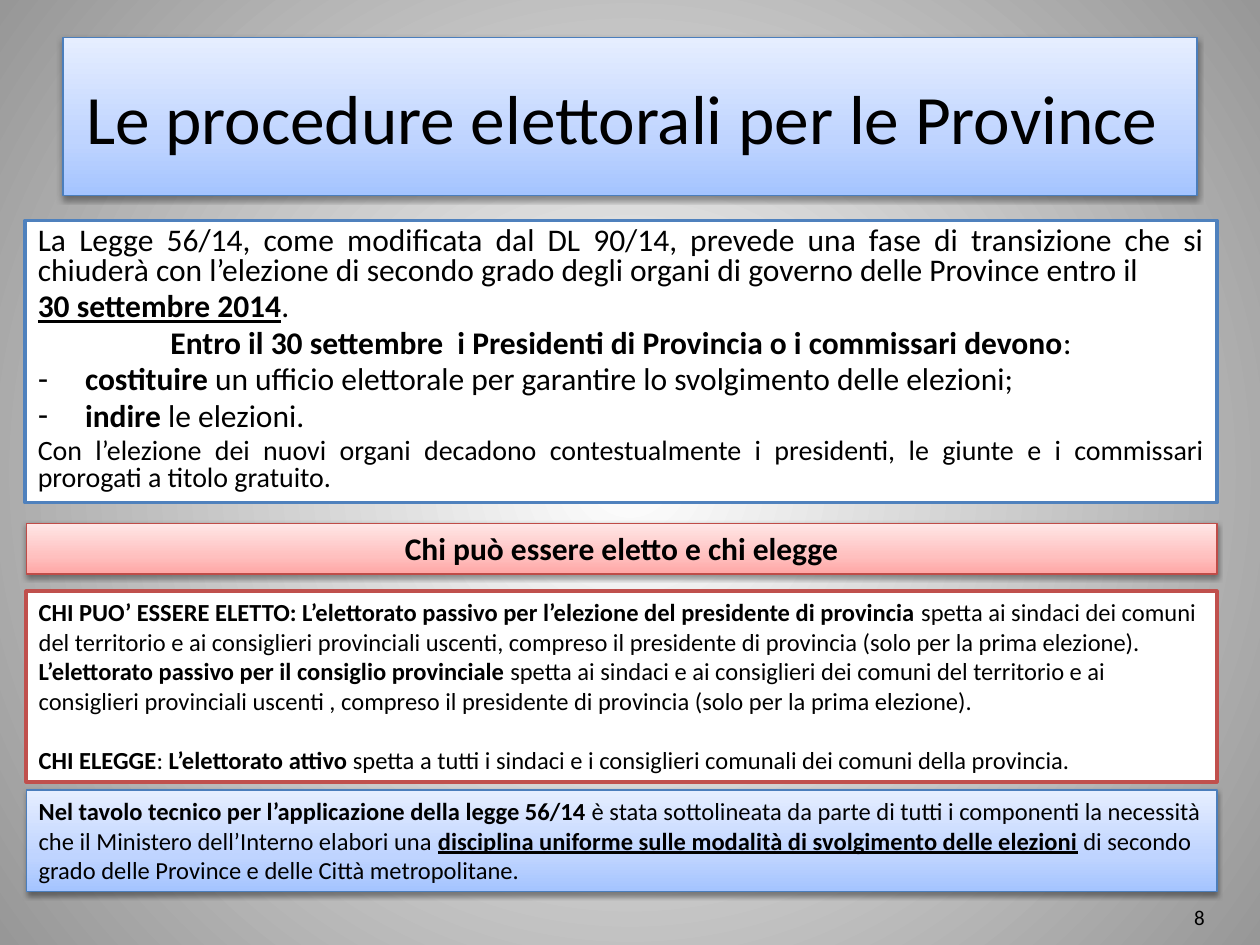
from dataclasses import dataclass

from lxml import etree
from pptx import Presentation
from pptx.dml.color import RGBColor
from pptx.enum.shapes import MSO_SHAPE
from pptx.enum.text import MSO_ANCHOR, MSO_AUTO_SIZE, PP_ALIGN
from pptx.oxml.ns import qn
from pptx.util import Pt

LEFT, CENTER, RIGHT, JUSTIFY = PP_ALIGN.LEFT, PP_ALIGN.CENTER, PP_ALIGN.RIGHT, PP_ALIGN.JUSTIFY
TOP, MIDDLE = MSO_ANCHOR.TOP, MSO_ANCHOR.MIDDLE
RECTANGLE = MSO_SHAPE.RECTANGLE
FONT = "Calibri"
BULLET_INDENT = 27
COLORS = {
    "text": "000000", "white": "FFFFFF", "background_edge": "979797",
    "blue": "4F81BD", "blue_edge": "4B7EBC", "red": "C0504D", "red_edge": "BF4C48",
}
BLUE_GRADIENT = ((0, "A4C4FF"), (35, "BFD4FF"), (100, "E6EEFF"))
RED_GRADIENT = ((0, "FFA6A5"), (35, "FFC0BF"), (100, "FFE7E7"))
BACKGROUND_GRADIENT = ((0, COLORS["white"]), (100, COLORS["background_edge"]))
BOLD = {"bold": True}
BOLD_UNDERLINED = {"bold": True, "underline": True}
PLAIN = {}


@dataclass
class Line:
    """One paragraph: runs are pairs of text and font format."""
    runs: list
    size: float
    format: dict
    bullet: str = ""


@dataclass
class Box:
    left: float
    top: float
    width: float
    height: float
    lines: list
    border: str = ""
    border_width: float = 0.75
    gradient: tuple = ()
    anchor: MSO_ANCHOR = TOP


BODY_FORMAT = {"alignment": JUSTIFY, "line_spacing": 0.8}
CENTERED = {"alignment": CENTER}
LEFT_ALIGNED = {"alignment": LEFT}

TITLE = Box(36, 21.6, 648, 90, [
    Line([("Le procedure elettorali per le Province ", PLAIN)], 39.6, CENTERED),
], "blue_edge", gradient=BLUE_GRADIENT, anchor=MIDDLE)

TRANSITION = Box(14.4, 126, 681, 161.3, [
    Line([("La Legge 56/14, come modificata dal DL 90/14, prevede una fase di transizione che si "
           "chiuderà con l’elezione di secondo grado degli organi di governo delle Province "
           "entro il", PLAIN)], 18, BODY_FORMAT),
    Line([("30 settembre 2014", BOLD_UNDERLINED), (". ", PLAIN)], 18, BODY_FORMAT),
    Line([("Entro il 30 settembre  i Presidenti di Provincia o i commissari devono", BOLD),
          (":", PLAIN)], 18, BODY_FORMAT | CENTERED),
    Line([("costituire", BOLD),
          (" un ufficio elettorale per garantire lo svolgimento delle elezioni;", PLAIN)],
         18, BODY_FORMAT, "-"),
    Line([("indire", BOLD), (" le elezioni.", PLAIN)], 18, BODY_FORMAT, "-"),
    Line([("Con l’elezione dei nuovi organi decadono contestualmente i presidenti, le giunte e i "
           "commissari prorogati a titolo gratuito.", PLAIN)], 16, BODY_FORMAT),
], "blue", 2)

PANELS = [
    Box(15, 299, 680.4, 29, [
        Line([("Chi può essere eletto e chi elegge", BOLD)], 18, CENTERED),
    ], "red_edge", gradient=RED_GRADIENT),
    Box(15, 337.8, 680.4, 109, [
        Line([("CHI PUO’ ESSERE ELETTO: L’elettorato passivo per l’elezione del presidente di "
               "provincia", BOLD),
              (" spetta ai sindaci dei comuni del territorio e ai consiglieri provinciali "
               "uscenti, compreso il presidente di provincia (solo per la prima elezione).",
               PLAIN)], 14, LEFT_ALIGNED),
        Line([("L’elettorato passivo per il consiglio provinciale ", BOLD),
              ("spetta ai sindaci e ai consiglieri dei comuni del territorio e ai consiglieri "
               "provinciali uscenti , compreso il presidente di provincia (solo per la prima "
               "elezione).", PLAIN)], 14, LEFT_ALIGNED),
        Line([("CHI ELEGGE", BOLD), (": ", PLAIN), ("L’elettorato attivo ", BOLD),
              ("spetta a tutti i sindaci e i consiglieri comunali dei comuni della provincia.",
               PLAIN)], 14, LEFT_ALIGNED | {"space_before": Pt(17)}),
    ], "red", 2),
    Box(15, 451.4, 680.4, 58.2, [
        Line([("Nel tavolo tecnico per l’applicazione della legge 56/14 ", BOLD),
              ("è stata sottolineata da parte di tutti i componenti la necessità che il "
               "Ministero dell’Interno elabori una ", PLAIN),
              ("disciplina uniforme sulle modalità di svolgimento delle elezioni",
               BOLD_UNDERLINED),
              (" di secondo grado delle Province e delle Città metropolitane.", PLAIN)],
             14, LEFT_ALIGNED),
    ], "blue_edge", gradient=BLUE_GRADIENT),
]
PAGE_NUMBER = Box(527.8, 509.8, 167.8, 28.8, [Line([("8", PLAIN)], 12, {"alignment": RIGHT})],
                  anchor=MIDDLE)


def add_element(parent, tag: str, **attributes):
    return etree.SubElement(parent, qn(tag), {key: str(value) for key, value in attributes.items()})


def set_gradient(fill, owner, stops: tuple, radial: bool = False) -> None:
    fill.gradient()
    gradient = owner.find(".//" + qn("a:gradFill"))
    for child in list(gradient):
        gradient.remove(child)
    stop_list = add_element(gradient, "a:gsLst")
    for position, color in stops:
        stop = add_element(stop_list, "a:gs", pos=position * 1000)
        add_element(stop, "a:srgbClr", val=color)
    if radial:
        path = add_element(gradient, "a:path", path="circle")
        add_element(path, "a:fillToRect", l=50000, t=50000, r=50000, b=50000)
    else:
        add_element(gradient, "a:lin", ang=270 * 60000, scaled=0)


def add_shadow(shape) -> None:
    effects = shape.element.spPr.find(qn("a:effectLst"))
    shadow = add_element(effects, "a:outerShdw", blurRad=Pt(3.1), dist=Pt(1.6),
                         dir=90 * 60000, rotWithShape=0)
    color = add_element(shadow, "a:srgbClr", val=COLORS["text"])
    add_element(color, "a:alpha", val=38000)


def write_line(paragraph, line: Line) -> None:
    for name, value in line.format.items():
        setattr(paragraph, name, value)
    properties = paragraph._p.get_or_add_pPr()
    indent = Pt(BULLET_INDENT) if line.bullet else 0
    properties.set("marL", str(indent))
    properties.set("indent", str(-indent))
    if line.bullet:
        add_element(properties, "a:buFontTx")
        add_element(properties, "a:buChar", char=line.bullet)
    else:
        add_element(properties, "a:buNone")
    for text, style in line.runs:
        run = paragraph.add_run()
        run.text = text
        font_format = {"name": FONT, "size": Pt(line.size), "bold": False} | style
        for name, value in font_format.items():
            setattr(run.font, name, value)
        run.font.color.rgb = RGBColor.from_string(COLORS["text"])


def format_box(shape, box: Box) -> None:
    for name in ("left", "top", "width", "height"):
        setattr(shape, name, Pt(getattr(box, name)))
    if box.border:
        shape.line.color.rgb = RGBColor.from_string(COLORS[box.border])
        shape.line.width = Pt(box.border_width)
        shape.shadow.inherit = False
        if box.gradient:
            set_gradient(shape.fill, shape.element, box.gradient)
            add_shadow(shape)
        else:
            shape.fill.solid()
            shape.fill.fore_color.rgb = RGBColor.from_string(COLORS["white"])
    frame = shape.text_frame
    frame.word_wrap = True
    frame.auto_size = MSO_AUTO_SIZE.NONE
    frame.vertical_anchor = box.anchor
    for index, line in enumerate(box.lines):
        write_line(frame.add_paragraph() if index else frame.paragraphs[0], line)


def main() -> None:
    presentation = Presentation()
    presentation.slide_width, presentation.slide_height = Pt(720), Pt(540)
    slide = presentation.slides.add_slide(presentation.slide_layouts[1])
    set_gradient(slide.background.fill, slide.element, BACKGROUND_GRADIENT, radial=True)
    format_box(slide.shapes.title, TITLE)
    format_box(slide.placeholders[1], TRANSITION)
    for panel in PANELS:
        format_box(slide.shapes.add_shape(RECTANGLE, 0, 0, 0, 0), panel)
    format_box(slide.shapes.add_textbox(0, 0, 0, 0), PAGE_NUMBER)
    presentation.save("out.pptx")


if __name__ == "__main__":
    main()
